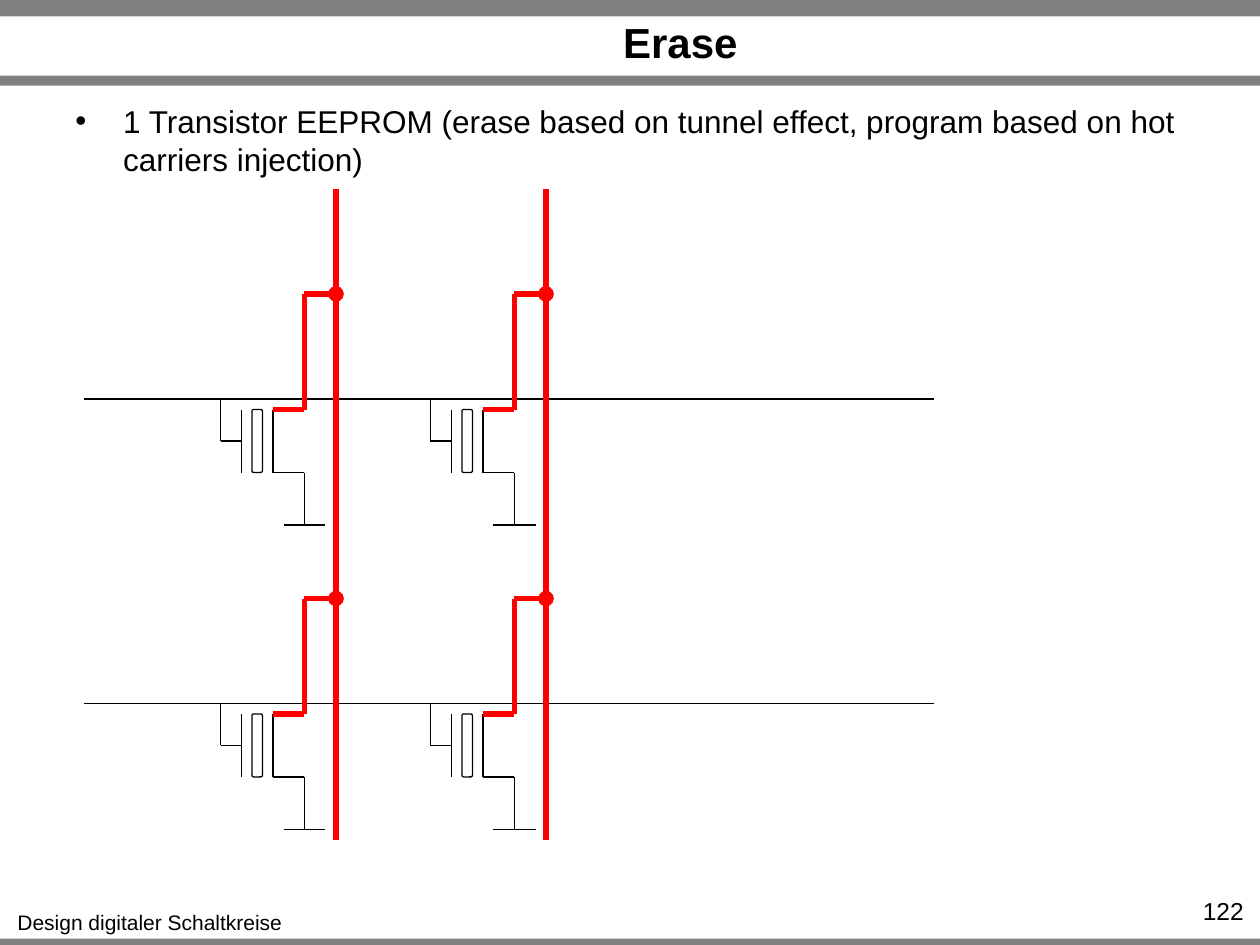
from itertools import product

from lxml.etree import SubElement
from pptx import Presentation
from pptx.dml.color import RGBColor
from pptx.enum.shapes import MSO_CONNECTOR, MSO_SHAPE
from pptx.enum.text import MSO_ANCHOR, PP_ALIGN
from pptx.oxml.ns import qn
from pptx.util import Inches, Pt

COLORS = {"bar": "808080", "ink": "000000", "hot": "FF0000"}
UNIT = Inches(1) / 12  # circuit grid: twelve steps to the inch
BITS = (32, 52)        # columns of the bit lines
WORDS = (38, 67)       # rows of the word lines
TAP, RISE = 11, 10     # from a cell's corner to its bit line and word line


def color(name):
    return RGBColor.from_string(COLORS[name])


def grid(*steps):
    return [round(step * UNIT) for step in steps]


def write(frame, text, size, align=PP_ALIGN.LEFT, bold=False, wrap=True,
          anchor=MSO_ANCHOR.TOP, bullet=False):
    frame.word_wrap = wrap
    frame.vertical_anchor = anchor
    para = frame.paragraphs[0]
    para.text = text
    para.alignment = align
    if bullet:
        props = para._p.get_or_add_pPr()
        indent = Inches(0.38)
        props.set("marL", str(indent))
        props.set("indent", str(-indent))
        SubElement(props, qn("a:buFont"), typeface="Arial")
        SubElement(props, qn("a:buChar"), char="•")
    font = para.font
    font.name, font.size, font.bold = "Arial", Pt(size), bold
    font.color.rgb = color("ink")


def label(slide, box, text, size, **style):
    shape = slide.shapes.add_textbox(*map(Inches, box))
    write(shape.text_frame, text, size, **style)


def wire(shapes, ends, hot=False, dot=False):
    """Draw a line between two grid points, with a dot at its end if asked."""
    line = shapes.add_connector(MSO_CONNECTOR.STRAIGHT, *grid(*ends))
    line.line.color.rgb = color("hot" if hot else "ink")
    line.line.width = Pt(3 if hot else 0.75)
    if dot:
        SubElement(line.line._get_or_add_ln(), qn("a:tailEnd"), type="oval")
    SubElement(line._element.spPr, qn("a:effectLst"))


def cell(slide, left, top):
    """Draw one floating-gate transistor from its top left grid point."""
    shapes = slide.shapes.add_group_shape().shapes

    def link(x1, y1, x2, y2, **style):
        wire(shapes, (left + x1, top + y1, left + x2, top + y2), **style)

    gate, body, drain = 2, 5, 8
    high, mid, low, ground = 11, 14, 17, 22
    link(0, RISE, 0, mid)
    link(0, mid, gate, mid)
    link(gate, high, gate, low)
    link(body, high, body, low)
    link(body, low, drain, low)
    link(drain, low, drain, ground)
    link(drain - 2, ground, drain + 2, ground)

    float_gate = shapes.add_shape(
        MSO_SHAPE.ROUNDED_RECTANGLE,
        *grid(left + 3, top + high, 1, low - high))
    float_gate.shadow.inherit = False
    float_gate.fill.background()
    float_gate.line.color.rgb = color("ink")
    float_gate.line.width = Pt(0.75)

    link(body, high, drain, high, hot=True)
    link(drain, 0, drain, high, hot=True)
    link(drain, 0, TAP, 0, hot=True, dot=True)


def array(slide, left, top, right, bottom):
    """Draw word lines, bit lines and a cell at each crossing."""
    for row in WORDS:
        wire(slide.shapes, (left, row, right, row))
    for col in BITS:
        wire(slide.shapes, (col, top, col, bottom), hot=True)
    for row, col in product(WORDS, BITS):
        cell(slide, col - TAP, row - RISE)


def bars(slide, width):
    for top, height in ((0, 0.13), (0.6, 0.08), (7.45, 0.05)):
        bar = slide.shapes.add_shape(
            MSO_SHAPE.RECTANGLE, 0, Inches(top), width, Inches(height))
        bar.shadow.inherit = False
        bar.fill.solid()
        bar.fill.fore_color.rgb = color("bar")
        bar.line.fill.background()


def head(slide, box):
    title = slide.shapes.title
    title.left, title.top, title.width, title.height = map(Inches, box)
    write(title.text_frame, "Erase", 24, align=PP_ALIGN.CENTER, bold=True,
          anchor=MSO_ANCHOR.MIDDLE)


def main():
    deck = Presentation()
    deck.slide_width, deck.slide_height = Inches(10), Inches(7.5)
    slide = deck.slides.add_slide(deck.slide_layouts[5])
    bars(slide, deck.slide_width)
    head(slide, (1.3, 0.14, 8.2, 0.38))
    label(slide, (0.5, 0.76, 9, 0.66),
          "1 Transistor EEPROM (erase based on tunnel effect, "
          "program based on hot carriers injection)", 18, bullet=True)
    label(slide, (0.03, 7.17, 2.32, 0.3), "Design digitaler Schaltkreise",
          12, align=PP_ALIGN.CENTER, wrap=False)
    label(slide, (9.1, 7.06, 0.87, 0.24), "122", 14, align=PP_ALIGN.RIGHT)
    array(slide, 8, 18, 89, 80)
    deck.save("out.pptx")


if __name__ == "__main__":
    main()
